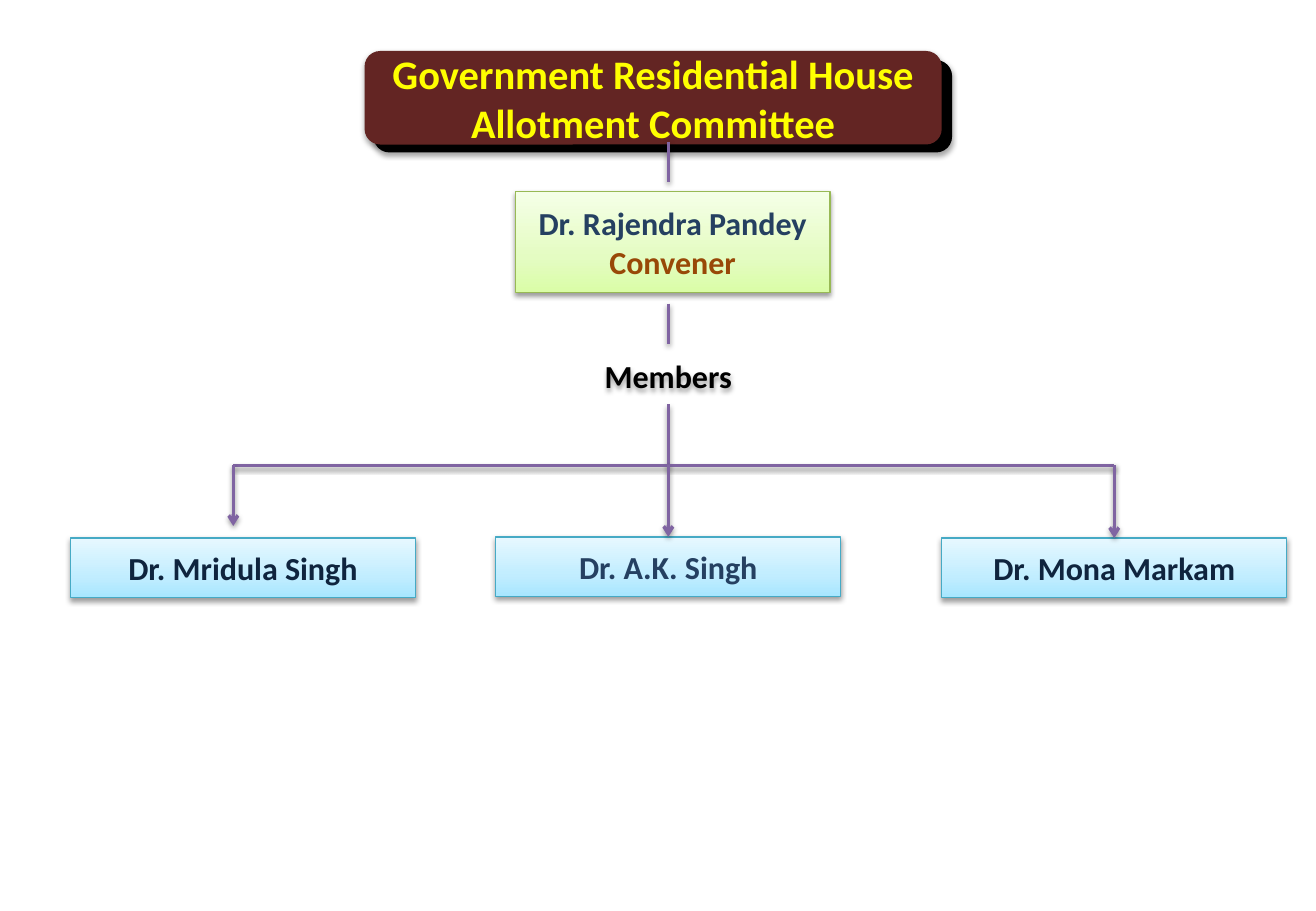
from copy import deepcopy
from dataclasses import dataclass

from lxml import etree
from pptx import Presentation
from pptx.dml.color import RGBColor
from pptx.enum.shapes import MSO_CONNECTOR, MSO_SHAPE
from pptx.enum.text import MSO_ANCHOR, PP_ALIGN
from pptx.oxml.ns import qn
from pptx.util import Inches, Pt

RECTANGLE = MSO_SHAPE.RECTANGLE
ROUNDED = MSO_SHAPE.ROUNDED_RECTANGLE
STRAIGHT = MSO_CONNECTOR.STRAIGHT
MIDDLE = MSO_ANCHOR.MIDDLE
CENTER = PP_ALIGN.CENTER
TOP_SIDE = 0


@dataclass(frozen=True)
class Theme:
    font: str = "Calibri"
    title_size: int = 24
    body_size: int = 19
    black: str = "000000"
    maroon: str = "632523"
    yellow: str = "FFFF00"
    navy: str = "254061"
    dark_navy: str = "0F243E"
    brown: str = "984807"
    purple: str = "8064A2"
    green_line: str = "98B955"
    blue_line: str = "46AAC5"
    green_stops: tuple = ((0, "DAFDA7"), (0.35, "E4FCC2"), (1, "F5FFE7"))
    blue_stops: tuple = ((0, "A7E6FF"), (0.35, "C1EDFF"), (1, "E7F8FF"))
    thin: float = 0.75
    thick: float = 2


def write_text(shape, lines, *, font, size):
    frame = shape.text_frame
    frame.word_wrap = True
    frame.vertical_anchor = MIDDLE
    frame.margin_left = frame.margin_right = Inches(0.07)
    frame.margin_top = frame.margin_bottom = Inches(0.04)
    for index, (text, color) in enumerate(lines):
        paragraph = frame.add_paragraph() if index else frame.paragraphs[0]
        paragraph.alignment = CENTER
        run = paragraph.add_run()
        run.text = text
        run.font.name = font
        run.font.size = Pt(size)
        run.font.bold = True
        run.font.color.rgb = RGBColor.from_string(color)


class ChartSlide:
    def __init__(self, slide, theme):
        self.slide = slide
        self.theme = theme

    def add_shadow(self, shape, opacity=38, distance=1.6):
        properties = shape._element.spPr
        effects = properties.find(qn("a:effectLst"))
        if effects is None:
            effects = etree.SubElement(properties, qn("a:effectLst"))
        shadow = etree.SubElement(
            effects, qn("a:outerShdw"), blurRad=str(Pt(3.1)),
            dist=str(Pt(distance)), dir="5400000", rotWithShape="0")
        color = etree.SubElement(shadow, qn("a:srgbClr"), val=self.theme.black)
        etree.SubElement(color, qn("a:alpha"), val=str(opacity * 1000))

    def fill_gradient(self, shape, stops):
        shape.fill.gradient()
        shape.fill.gradient_angle = 90
        stop_list = next(shape._element.spPr.iter(qn("a:gsLst")))
        stop_list.append(deepcopy(stop_list[-1]))
        for stop, (position, color) in zip(shape.fill.gradient_stops, stops):
            stop.position = position
            stop.color.rgb = RGBColor.from_string(color)

    def add_box(self, box, fill, line=None, lines=(), kind=RECTANGLE,
                size=None, opacity=38, distance=1.6):
        shape = self.slide.shapes.add_shape(kind, *map(Inches, box))
        shape.shadow.inherit = False
        if isinstance(fill, str):
            shape.fill.solid()
            shape.fill.fore_color.rgb = RGBColor.from_string(fill)
        else:
            self.fill_gradient(shape, fill)
        if line:
            shape.line.color.rgb = RGBColor.from_string(line)
            shape.line.width = Pt(self.theme.thin)
        else:
            shape.line.fill.background()
        self.add_shadow(shape, opacity, distance)
        if lines:
            write_text(shape, lines, font=self.theme.font,
                       size=size or self.theme.body_size)
        return shape

    def add_label(self, box, text):
        shape = self.slide.shapes.add_textbox(*map(Inches, box))
        write_text(shape, [(text, self.theme.black)], font=self.theme.font,
                   size=self.theme.body_size)
        self.add_shadow(shape)

    def add_line(self, start, end, arrow=False, target=None):
        connector = self.slide.shapes.add_connector(
            STRAIGHT, *map(Inches, start + end))
        connector.line.color.rgb = RGBColor.from_string(self.theme.purple)
        connector.line.width = Pt(self.theme.thick)
        if arrow:
            etree.SubElement(connector.line._get_or_add_ln(),
                             qn("a:tailEnd"), type="arrow")
        self.add_shadow(connector)
        if target is not None:
            connector.end_connect(target, TOP_SIDE)


def main():
    presentation = Presentation()
    presentation.slide_width = Inches(10.83)
    presentation.slide_height = Inches(7.5)
    slide = presentation.slides.add_slide(presentation.slide_layouts[6])
    theme = Theme()
    chart = ChartSlide(slide, theme)

    chart.add_box((3.08, 0.5, 4.75, 0.75), theme.black, theme.black,
                  kind=ROUNDED, opacity=35, distance=1.8)
    chart.add_box((3, 0.42, 4.75, 0.77), theme.maroon, kind=ROUNDED,
                  lines=[("Government Residential House Allotment Committee",
                          theme.yellow)],
                  size=theme.title_size, opacity=35, distance=1.8)
    chart.add_box((4.24, 1.58, 2.59, 0.83), theme.green_stops,
                  theme.green_line,
                  [("Dr. Rajendra Pandey", theme.navy),
                   ("Convener", theme.brown)])
    chart.add_label((4.25, 2.85, 2.5, 0.49), "Members")

    trunk, branch_top = 5.5, 3.83
    for top, bottom in ((1.17, 1.5), (2.5, 2.83), (3.33, branch_top)):
        chart.add_line((trunk, top), (trunk, bottom))
    chart.add_line((1.92, branch_top), (9.17, branch_top))

    members = (
        ("Dr. Mridula Singh", theme.dark_navy, 0.58, 4.43, 1.92, False),
        ("Dr. A.K. Singh", theme.navy, 4.08, 4.42, trunk, True),
        ("Dr. Mona Markam", theme.dark_navy, 7.75, 4.43, 9.17, True),
    )
    for name, color, left, top, branch, joined in members:
        member = chart.add_box((left, top, 2.84, 0.49), theme.blue_stops,
                               theme.blue_line, [(name, color)])
        chart.add_line((branch, branch_top), (branch, 4.33), arrow=True,
                       target=member if joined else None)

    presentation.save("out.pptx")


if __name__ == "__main__":
    main()
